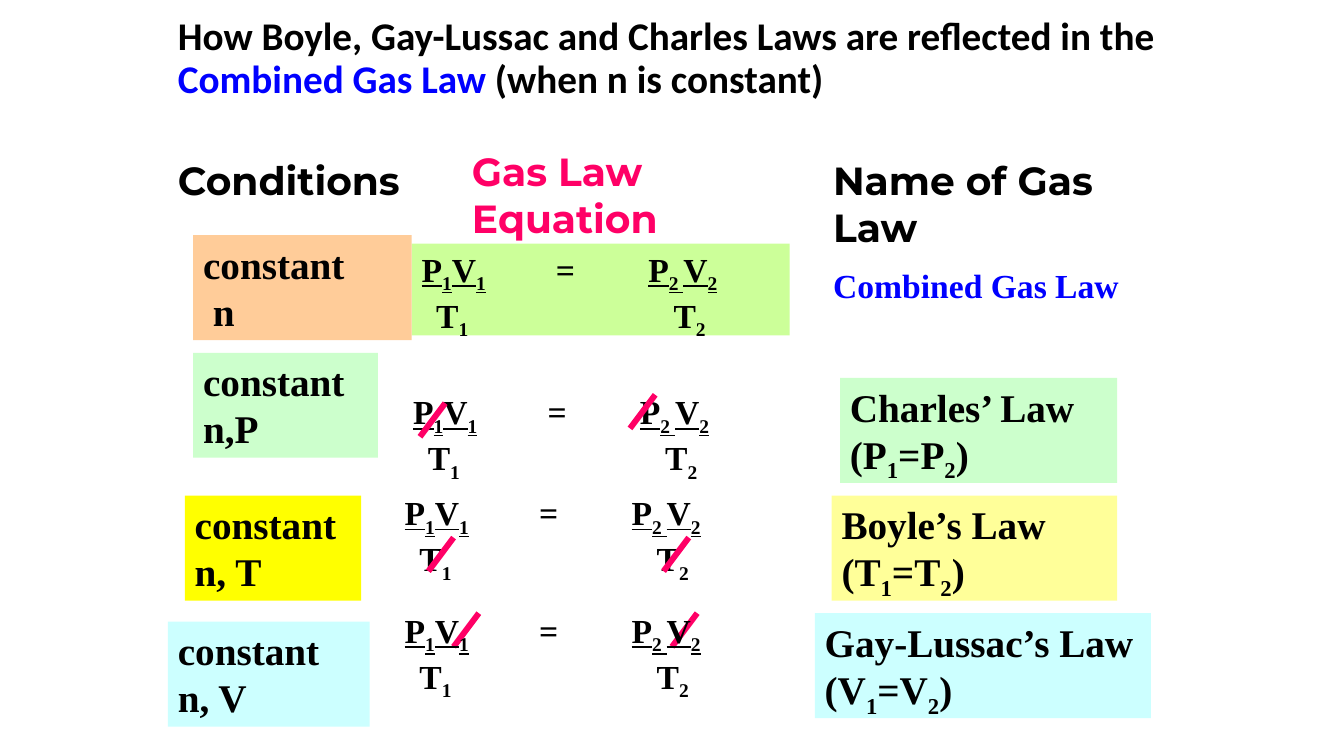
from pptx import Presentation
from pptx.dml.color import RGBColor
from pptx.enum import shapes, text
from pptx.oxml import ns
from pptx.util import Pt
from lxml import etree

BLACK = RGBColor(0x00, 0x00, 0x00)
BLUE = RGBColor(0x00, 0x00, 0xFF)
PINK = RGBColor(0xFF, 0x00, 0x66)
PEACH = RGBColor(0xFF, 0xCC, 0x99)
LIME = RGBColor(0xCC, 0xFF, 0x99)
MINT = RGBColor(0xCC, 0xFF, 0xCC)
YELLOW = RGBColor(0xFF, 0xFF, 0x00)
CREAM = RGBColor(0xFF, 0xFF, 0x99)
AQUA = RGBColor(0xCC, 0xFF, 0xFF)

SERIF, HEAD, SANS = "Times New Roman", "Montserrat", "Calibri"


def add_text(para, words, size=28, font=SERIF, color=BLACK, line=False):
    """Add bold words; every second part between bars is a subscript."""
    form = {"name": font, "size": Pt(size), "bold": True, "underline": line}
    for i, part in enumerate(words.split("|")):
        if not part:
            continue
        run = para.add_run()
        run.text = part
        for key, value in form.items():
            setattr(run.font, key, value)
        run.font.color.rgb = color
        if i % 2:
            run.font._element.set("baseline", "-25000")


def add_box(slide, x, y, w, h, fill=None):
    """Add a text frame, on a filled rectangle if a fill is given."""
    area = Pt(x), Pt(y), Pt(w), Pt(h)
    if fill is None:
        box = slide.shapes.add_textbox(*area)
    else:
        box = slide.shapes.add_shape(shapes.MSO_SHAPE.RECTANGLE, *area)
        box.shadow.inherit = False
        box.fill.solid()
        box.fill.fore_color.rgb = fill
        box.line.fill.background()
    form = {"word_wrap": True, "vertical_anchor": text.MSO_ANCHOR.TOP,
            "auto_size": text.MSO_AUTO_SIZE.SHAPE_TO_FIT_TEXT}
    for key, value in form.items():
        setattr(box.text_frame, key, value)
    box.text_frame.paragraphs[0].alignment = text.PP_ALIGN.LEFT
    return box.text_frame


def add_label(slide, words, x, y, w, h=75, fill=None, **form):
    frame = add_box(slide, x, y, w, h, fill)
    add_text(frame.paragraphs[0], words, **form)
    return frame


def set_tabs(para, stops):
    tabs = etree.SubElement(para._p.get_or_add_pPr(), ns.qn("a:tabLst"))
    for stop in stops:
        tab = etree.SubElement(tabs, ns.qn("a:tab"))
        tab.set("pos", str(int(Pt(stop))))
        tab.set("algn", "l")


def add_law(slide, x, y, fill=None, lead=False):
    """Add P1V1/T1 = P2V2/T2; lead draws the right-hand bar further left."""
    frame = add_box(slide, x, y, 270, 65.5, fill)
    top, low = frame.paragraphs[0], frame.add_paragraph()
    low.alignment = text.PP_ALIGN.LEFT
    set_tabs(top, (96, 144, 162))
    set_tabs(low, (10.5, 180))
    add_text(top, "P|1|V|1|", 24, line=True)
    add_text(top, "\t=\t", 24)
    add_text(top, "\t", 24, line=lead)
    add_text(top, "P|2 |V|2|", 24, line=True)
    add_text(low, "\tT|1|\tT|2|", 24)


def add_slash(slide, x, y):
    """Strike out a term, from top right down to the left."""
    line = slide.shapes.add_connector(
        shapes.MSO_CONNECTOR.STRAIGHT, Pt(x), Pt(y), Pt(x - 18), Pt(y + 24))
    line.line.color.rgb = PINK
    line.line.width = Pt(4.25)
    etree.SubElement(line._element.spPr, ns.qn("a:effectLst"))


def main():
    deck = Presentation()
    deck.slide_width, deck.slide_height = Pt(960), Pt(540)
    slide = deck.slides.add_slide(deck.slide_layouts[6])

    # Title
    frame = add_box(slide, 120, 0, 720, 116.6)
    frame.auto_size = text.MSO_AUTO_SIZE.NONE
    frame.margin_top = Pt(12)
    title = frame.paragraphs[0]
    title.line_spacing = 0.9
    for words, color in (
            ("How Boyle, Gay-Lussac and Charles Laws are reflected in the ", BLACK),
            ("Combined Gas Law ", BLUE), ("(when n is constant)", BLACK)):
        add_text(title, words, font=SANS, color=color)

    # Column heads
    add_label(slide, "Conditions", 120, 108, 186, 41, font=HEAD)
    add_label(slide, "Name of Gas Law", 588, 108, 204, font=HEAD)
    add_label(slide, "Gas Law Equation", 330, 102, 204, font=HEAD, color=PINK)

    # Combined law
    add_law(slide, 294, 174, LIME, lead=True)
    frame = add_label(slide, "constant", 138, 168, 156, fill=PEACH)
    low = frame.add_paragraph()
    low.alignment = text.PP_ALIGN.LEFT
    low._p.get_or_add_pPr().set("marL", str(int(Pt(7))))
    add_text(low, "n")
    add_label(slide, "Combined Gas Law", 588, 186, 240, 36, size=24, color=BLUE)

    # Conditions and names of the three laws
    for words, x, y, w, fill in (
            ("constant n,P", 138, 252, 132, MINT),
            ("Charles’ Law (P|1|=P|2|)", 600, 270, 198, MINT),
            ("constant n, T", 132, 354, 126, YELLOW),
            ("Boyle’s Law (T|1|=T|2|)", 594, 354, 204, CREAM),
            ("constant n, V", 120, 444, 144, AQUA),
            ("Gay-Lussac’s Law (V|1|=V|2|)", 582, 438, 240, AQUA)):
        add_label(slide, words, x, y, w, fill=fill)

    # Equations with the constant term struck out
    for x, y in ((342, 438), (498, 438)):
        add_slash(slide, x, y)
    add_law(slide, 288, 276, lead=True)
    add_law(slide, 282, 348)
    add_law(slide, 282, 432)
    for x, y in ((318, 288), (468, 282), (324, 384), (492, 384)):
        add_slash(slide, x, y)

    deck.save("out.pptx")


if __name__ == "__main__":
    main()
